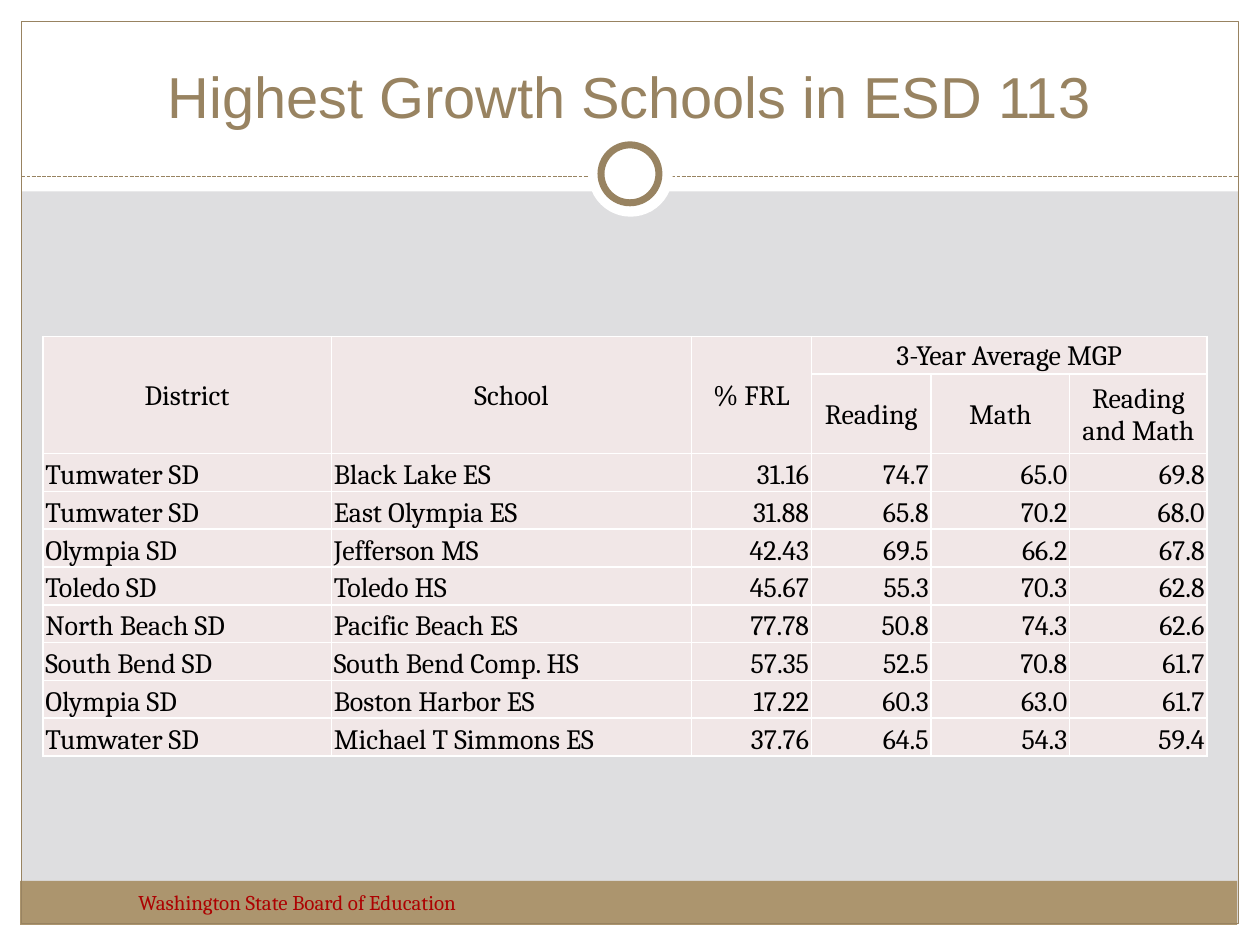
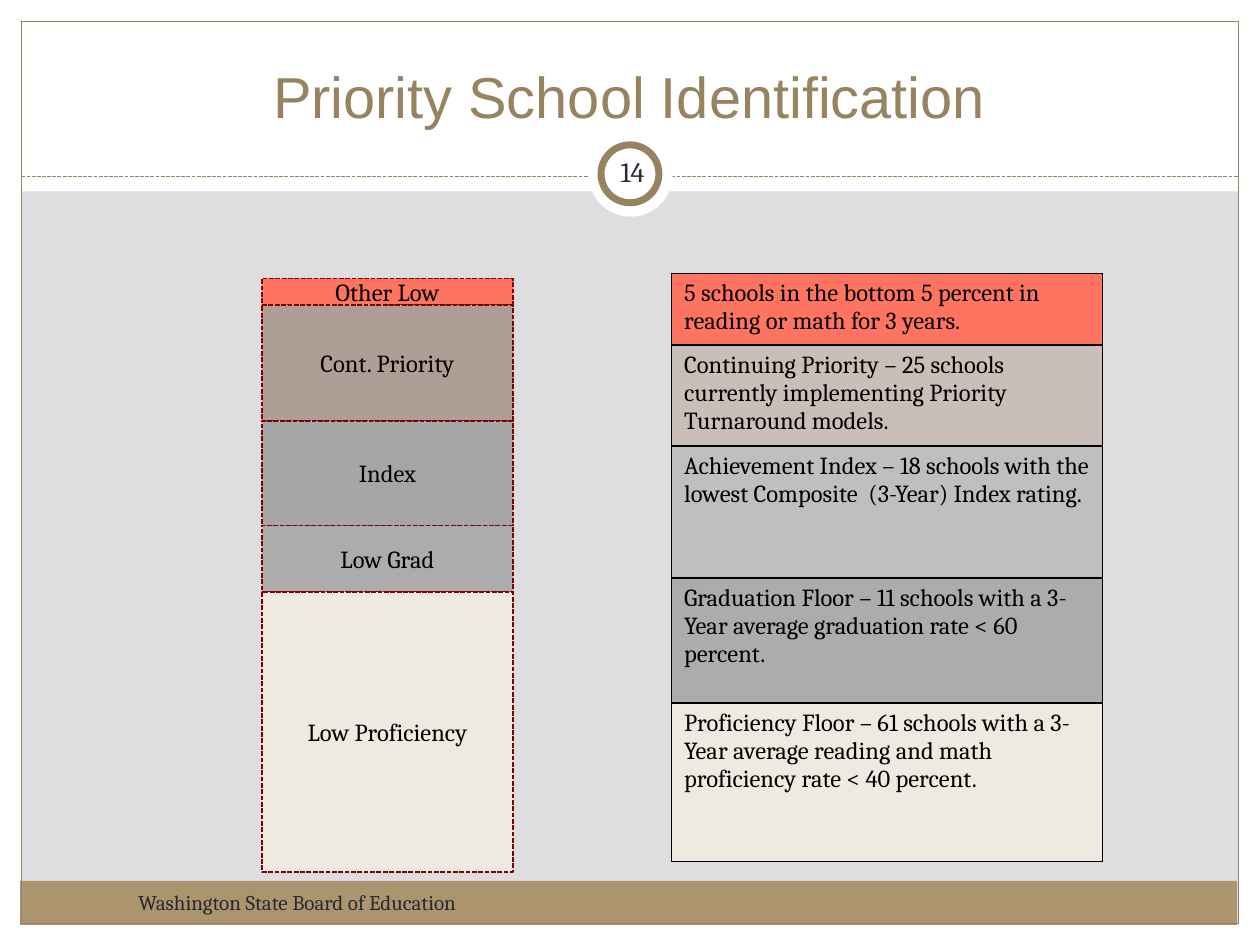
from lxml import etree
from pptx import Presentation
from pptx.dml.color import RGBColor
from pptx.enum import dml, shapes, text
from pptx.oxml import ns
from pptx.util import Inches, Pt

WHITE = RGBColor(0xFF, 0xFF, 0xFF)
BLACK = RGBColor(0x00, 0x00, 0x00)
BACKDROP = RGBColor(0xDE, 0xDE, 0xE0)
BAND = RGBColor(0xAC, 0x95, 0x6E)
BRONZE = RGBColor(0x98, 0x83, 0x61)
INK = RGBColor(0x29, 0x29, 0x34)
RED = RGBColor(0xAD, 0x01, 0x01)
DARK_RED = RGBColor(0x80, 0x01, 0x01)
BLUSH = RGBColor(0xF1, 0xE7, 0xE7)
CORAL = RGBColor(0xFF, 0x74, 0x61)
TAUPE = RGBColor(0xAF, 0x9E, 0x95)
LIGHT_TAUPE = RGBColor(0xCA, 0xBF, 0xB8)
GREY = RGBColor(0xA6, 0xA6, 0xA6)
LIGHT_GREY = RGBColor(0xBF, 0xBF, 0xBF)
MID_GREY = RGBColor(0xAC, 0xAC, 0xAC)
CREAM = RGBColor(0xEE, 0xEA, 0xE2)

TITLE_FONT = "Arial"
BODY_FONT = "Cambria"
LEFT, CENTER, RIGHT = text.PP_ALIGN.LEFT, text.PP_ALIGN.CENTER, text.PP_ALIGN.RIGHT
TOP, MIDDLE, BOTTOM = text.MSO_ANCHOR.TOP, text.MSO_ANCHOR.MIDDLE, text.MSO_ANCHOR.BOTTOM
RECTANGLE, OVAL = shapes.MSO_SHAPE.RECTANGLE, shapes.MSO_SHAPE.OVAL

GROWTH_COLUMNS = [2.29, 2.86, 0.95, 0.95, 1.1, 1.09]
GROWTH_ROWS = [0.3, 0.63] + [0.3] * 8
GROWTH_CELLS = [
    ["District", "School", "% FRL", "3-Year Average MGP", "", ""],
    ["", "", "", "Reading", "Math", "Reading and Math"],
    ["Tumwater SD", "Black Lake ES", "31.16", "74.7", "65.0", "69.8"],
    ["Tumwater SD", "East Olympia ES", "31.88", "65.8", "70.2", "68.0"],
    ["Olympia SD", "Jefferson MS", "42.43", "69.5", "66.2", "67.8"],
    ["Toledo SD", "Toledo HS", "45.67", "55.3", "70.3", "62.8"],
    ["North Beach SD", "Pacific Beach ES", "77.78", "50.8", "74.3", "62.6"],
    ["South Bend SD", "South Bend Comp. HS", "57.35", "52.5", "70.8", "61.7"],
    ["Olympia SD", "Boston Harbor ES", "17.22", "60.3", "63.0", "61.7"],
    ["Tumwater SD", "Michael T Simmons ES", "37.76", "64.5", "54.3", "59.4"],
]
PRIORITY_BARS = [
    ("Other Low", 0.21, CORAL),
    ("Cont. Priority", 0.92, TAUPE),
    ("Index", 0.83, GREY),
    ("Low Grad", 0.53, MID_GREY),
    ("Low Proficiency", 2.22, CREAM),
]
PRIORITY_RULES = [
    ("5 schools in the bottom 5 percent in reading or math for 3 years.", 0.55, CORAL),
    ("Continuing Priority – 25 schools currently implementing Priority Turnaround models.",
     0.78, LIGHT_TAUPE),
    ("Achievement Index – 18 schools with the lowest Composite  (3-Year) Index rating.",
     1.05, LIGHT_GREY),
    ("Graduation Floor – 11 schools with a 3-Year average graduation rate < 60 percent.",
     0.99, MID_GREY),
    ("Proficiency Floor – 61 schools with a 3-Year average reading and math "
     "proficiency rate < 40 percent.", 1.26, CREAM),
]


def write(frame, words, size, color, align=LEFT, anchor=TOP, font=BODY_FONT):
    frame.word_wrap = True
    frame.vertical_anchor = anchor
    para = frame.paragraphs[0]
    para.text = words
    para.alignment = align
    para.font.name = font
    para.font.size = Pt(size)
    para.font.color.rgb = color


def set_line(line, color, width, dashed=False):
    line.color.rgb = color
    line.width = Pt(width)
    if dashed:
        line.dash_style = dml.MSO_LINE.SQUARE_DOT


def add_shape(page, kind, box, fill=None):
    shape = page.shapes.add_shape(kind, *map(Inches, box))
    shape.shadow.inherit = False
    shape.line.fill.background()
    if fill is None:
        shape.fill.background()
    else:
        shape.fill.solid()
        shape.fill.fore_color.rgb = fill
    return shape


def add_text(page, box, words, size, color, align=LEFT, anchor=TOP, inset=None):
    frame = page.shapes.add_textbox(*map(Inches, box)).text_frame
    if inset is not None:
        frame.margin_left = frame.margin_right = Inches(inset)
        frame.margin_top = frame.margin_bottom = Inches(inset)
    write(frame, words, size, color, align, anchor)


def add_table(page, left, top, widths, heights):
    table = page.shapes.add_table(
        len(heights), len(widths), Inches(left), Inches(top),
        Inches(sum(widths)), Inches(sum(heights))).table
    table.first_row = table.horz_banding = False
    for column, width in zip(table.columns, widths):
        column.width = Inches(width)
    for row, height in zip(table.rows, heights):
        row.height = Inches(height)
    return table


def paint_cell(cell, fill, border):
    properties = cell._tc.get_or_add_tcPr()
    for side in ("a:lnL", "a:lnR", "a:lnT", "a:lnB"):
        edge = etree.SubElement(properties, ns.qn(side), w=str(Pt(1)))
        solid = etree.SubElement(edge, ns.qn("a:solidFill"))
        etree.SubElement(solid, ns.qn("a:srgbClr"), val=str(border))
    cell.fill.solid()
    cell.fill.fore_color.rgb = fill


def move_frame_to_layout(page, layout):
    layout.background.fill.solid()
    layout.background.fill.fore_color.rgb = BACKDROP
    parts = [
        add_shape(page, RECTANGLE, box, WHITE)
        for box in [(0, 7.33, 10, 0.17), (0, 0, 10, 1.52),
                    (0, 0, 0.17, 7.5), (9.83, 0, 0.17, 7.5)]
    ]
    parts.append(add_shape(page, RECTANGLE, (0.16, 6.99, 9.66, 0.35), BAND))
    outline = add_shape(page, RECTANGLE, (0.17, 0.17, 9.66, 7.16))
    set_line(outline.line, BRONZE, 0.75)
    divider = page.shapes.add_connector(
        shapes.MSO_CONNECTOR.STRAIGHT, Inches(0.17), Inches(1.4), Inches(9.83), Inches(1.4))
    set_line(divider.line, BRONZE, 0.75, dashed=True)
    etree.SubElement(divider._element.spPr, ns.qn("a:effectLst"))
    halo = add_shape(page, OVAL, (4.67, 1.05, 0.67, 0.67), WHITE)
    ring = add_shape(page, OVAL, (4.77, 1.15, 0.46, 0.46), WHITE)
    set_line(ring.line, BRONZE, 4)
    for part in parts + [outline, divider, halo, ring]:
        layout.shapes.element.append(part.element)


def add_page(deck, layout, heading, footer_color):
    page = deck.slides.add_slide(layout)
    title = page.shapes.title
    title.left, title.top, title.width, title.height = map(Inches, (0.33, 0.25, 9.33, 0.83))
    title.text_frame.auto_size = text.MSO_AUTO_SIZE.NONE
    write(title.text_frame, heading, 33, BRONZE, CENTER, BOTTOM, TITLE_FONT)
    add_text(page, (1, 7.01, 3.92, 0.4), "Washington State Board of Education", 12, footer_color)
    return page


def add_growth_table(page, left, top):
    table = add_table(page, left, top, GROWTH_COLUMNS, GROWTH_ROWS)
    for row, values in enumerate(GROWTH_CELLS):
        for column, value in enumerate(values):
            cell = table.cell(row, column)
            paint_cell(cell, BLUSH, WHITE)
            cell.margin_left = cell.margin_right = cell.margin_top = Inches(0.02)
            cell.margin_bottom = 0
            heading = row < 2
            cell.vertical_anchor = MIDDLE if heading else BOTTOM
            align = CENTER if heading else LEFT if column < 2 else RIGHT
            write(cell.text_frame, value, 16, BLACK, align, cell.vertical_anchor)
    for column in range(3):
        table.cell(0, column).merge(table.cell(1, column))
    table.cell(0, 3).merge(table.cell(0, 5))


def add_priority_stack(page, left, top, width):
    for label, height, fill in PRIORITY_BARS:
        bar = add_shape(page, RECTANGLE, (left, top, width, height), fill)
        set_line(bar.line, DARK_RED, 0.9, dashed=True)
        write(bar.text_frame, label, 14, BLACK, CENTER, MIDDLE)
        top += height


def add_priority_rules(page, left, top, width):
    heights = [height for _, height, _ in PRIORITY_RULES]
    table = add_table(page, left, top, [width], heights)
    for row, (rule, _, fill) in enumerate(PRIORITY_RULES):
        cell = table.cell(row, 0)
        paint_cell(cell, fill, BLACK)
        write(cell.text_frame, rule, 14, BLACK)


def main():
    deck = Presentation()
    deck.slide_width, deck.slide_height = Inches(10), Inches(7.5)
    layout = deck.slide_layouts.get_by_name("Title Only")

    growth = add_page(deck, layout, "Highest Growth Schools in ESD 113", RED)
    move_frame_to_layout(growth, layout)
    add_growth_table(growth, 0.34, 2.67)

    priority = add_page(deck, layout, "Priority School Identification", INK)
    add_priority_rules(priority, 5.33, 2.17, 3.42)
    add_text(priority, (4.77, 1.12, 0.5, 0.48), "14", 16, INK, CENTER, MIDDLE, 0.05)
    add_priority_stack(priority, 2.08, 2.21, 1.99)

    deck.save("out.pptx")


if __name__ == "__main__":
    main()
